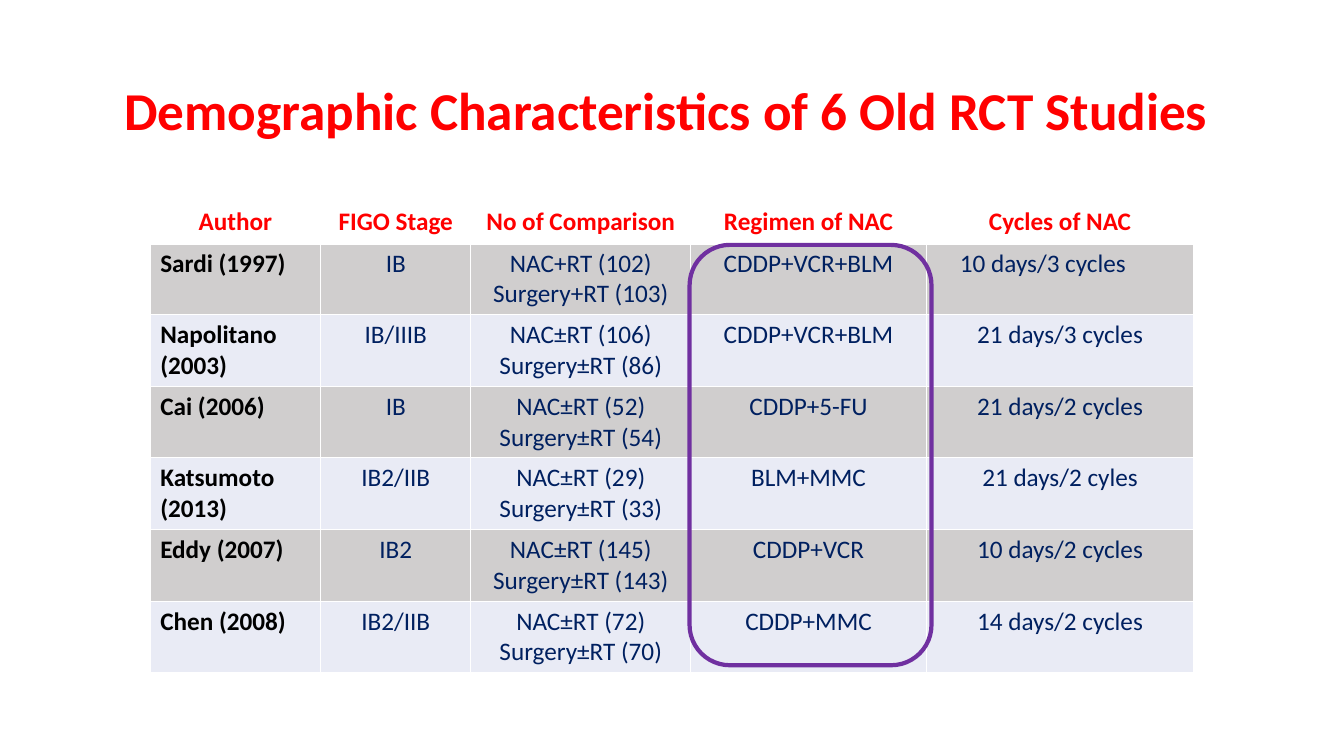
from pptx import Presentation
from pptx.dml.color import RGBColor as Rgb
from pptx.enum.shapes import MSO_SHAPE as Shape
from pptx.enum.text import MSO_ANCHOR as Anchor, MSO_AUTO_SIZE as Fit, PP_ALIGN as Align
from pptx.oxml import parse_xml
from pptx.oxml.ns import nsdecls
from pptx.util import Inches, Pt

WIDE, HIGH = Inches(13.33), Inches(7.5)


class Theme:
    """Colours and type formats of the slide."""
    white = "FFFFFF"
    ring = "7030A0"
    bands = ("D0CECE", "E9EBF5")
    title = {"name": "Calibri", "size": Pt(38), "bold": True, "color": "FF0000"}
    head = {**title, "size": Pt(18)}
    author = {**head, "color": "000000"}
    body = {**head, "bold": False, "color": "002060"}


HEADS = ("Author", "FIGO Stage", "No of Comparison", "Regimen of NAC", "Cycles of NAC")
TRIALS = (
    ("Sardi (1997)", "IB", "NAC+RT (102)\nSurgery+RT (103)", "CDDP+VCR+BLM", "10 days/3 cycles"),
    ("Napolitano (2003)", "IB/IIIB", "NAC±RT (106)\nSurgery±RT (86)", "CDDP+VCR+BLM", "21 days/3 cycles"),
    ("Cai (2006)", "IB", "NAC±RT (52)\nSurgery±RT (54)", "CDDP+5-FU", "21 days/2 cycles"),
    ("Katsumoto (2013)", "IB2/IIB", "NAC±RT (29)\nSurgery±RT (33)", "BLM+MMC", "21 days/2 cyles"),
    ("Eddy (2007)", "IB2", "NAC±RT (145)\nSurgery±RT (143)", "CDDP+VCR", "10 days/2 cycles"),
    ("Chen (2008)", "IB2/IIB", "NAC±RT (72)\nSurgery±RT (70)", "CDDP+MMC", "14 days/2 cycles"),
)
COLS = (12.68, 11.18, 16.35, 17.55, 19.88)
ROWS = (5.47,) + (9.47,) * len(TRIALS)


def across(share):
    """Turn a percentage of the slide's width into a length."""
    return int(WIDE * share / 100)


def down(share):
    """Turn a percentage of the slide's height into a length."""
    return int(HIGH * share / 100)


def area(left, top, width, height):
    """Turn four percentages into a position and size."""
    return across(left), down(top), across(width), down(height)


def write(frame, text, look, align):
    """Fill a text frame, one paragraph a line, in the given format."""
    frame.text = text
    for para in frame.paragraphs:
        para.alignment = align
        for run in para.runs:
            for key, value in look.items():
                if key == "color":
                    run.font.color.rgb = Rgb.from_string(value)
                else:
                    setattr(run.font, key, value)


def add_title(slide, text):
    """Place and format the title."""
    title = slide.shapes.title
    spot = dict(zip(("left", "top", "width", "height"), area(6.9, 5.33, 86.27, 19.33)))
    for key, value in spot.items():
        setattr(title, key, value)
    frame = title.text_frame
    write(frame, text, Theme.title, Align.CENTER)
    form = {"auto_size": Fit.NONE, "word_wrap": True,
            "vertical_anchor": Anchor.MIDDLE, "margin_right": Inches(0.22)}
    for key, value in form.items():
        setattr(frame, key, value)
    frame.paragraphs[0].line_spacing = 0.9


def edge(cell, base):
    """Draw white borders round a cell, with the given bottom width."""
    props = cell._tc.get_or_add_tcPr()
    for spot, (side, size) in enumerate({"L": 1, "R": 1, "T": 1, "B": base}.items()):
        props.insert(spot, parse_xml(
            f'<a:ln{side} {nsdecls("a")} w="{Pt(size)}"><a:solidFill>'
            f'<a:srgbClr val="{Theme.white}"/></a:solidFill></a:ln{side}>'))


def add_grid(slide):
    """Add the table of trials and return it."""
    spot = area(11.18, 26.67, sum(COLS), sum(ROWS))
    grid = slide.shapes.add_table(len(ROWS), len(COLS), *spot).table
    grid.horz_banding = False
    for col, share in zip(grid.columns, COLS):
        col.width = across(share)
    for row, share in zip(grid.rows, ROWS):
        row.height = down(share)
    for r, words in enumerate((HEADS, *TRIALS)):
        for c, text in enumerate(words):
            cell = grid.cell(r, c)
            look = Theme.head if r == 0 else Theme.author if c == 0 else Theme.body
            align = Align.LEFT if r and c == 0 else Align.CENTER
            write(cell.text_frame, text, look, align)
            if r:
                cell.fill.solid()
                cell.fill.fore_color.rgb = Rgb.from_string(Theme.bands[(r - 1) % 2])
            else:
                cell.fill.background()
            edge(cell, 1 if r else 3)
    return grid


def add_ring(slide):
    """Outline the regimen column."""
    ring = slide.shapes.add_shape(Shape.ROUNDED_RECTANGLE, *area(51.31, 32.4, 18, 55.6))
    ring.shadow.inherit = False
    ring.fill.background()
    ring.line.color.rgb = Rgb.from_string(Theme.ring)
    ring.line.width = Pt(3)


def main():
    """Build and save the slide."""
    deck = Presentation()
    deck.slide_width, deck.slide_height = WIDE, HIGH
    slide = deck.slides.add_slide(deck.slide_layouts[5])
    add_title(slide, "Demographic Characteristics of 6 Old RCT Studies")
    grid = add_grid(slide)
    grid.cell(1, 4).margin_right = Inches(0.44)
    add_ring(slide)
    deck.save("out.pptx")


if __name__ == "__main__":
    main()
